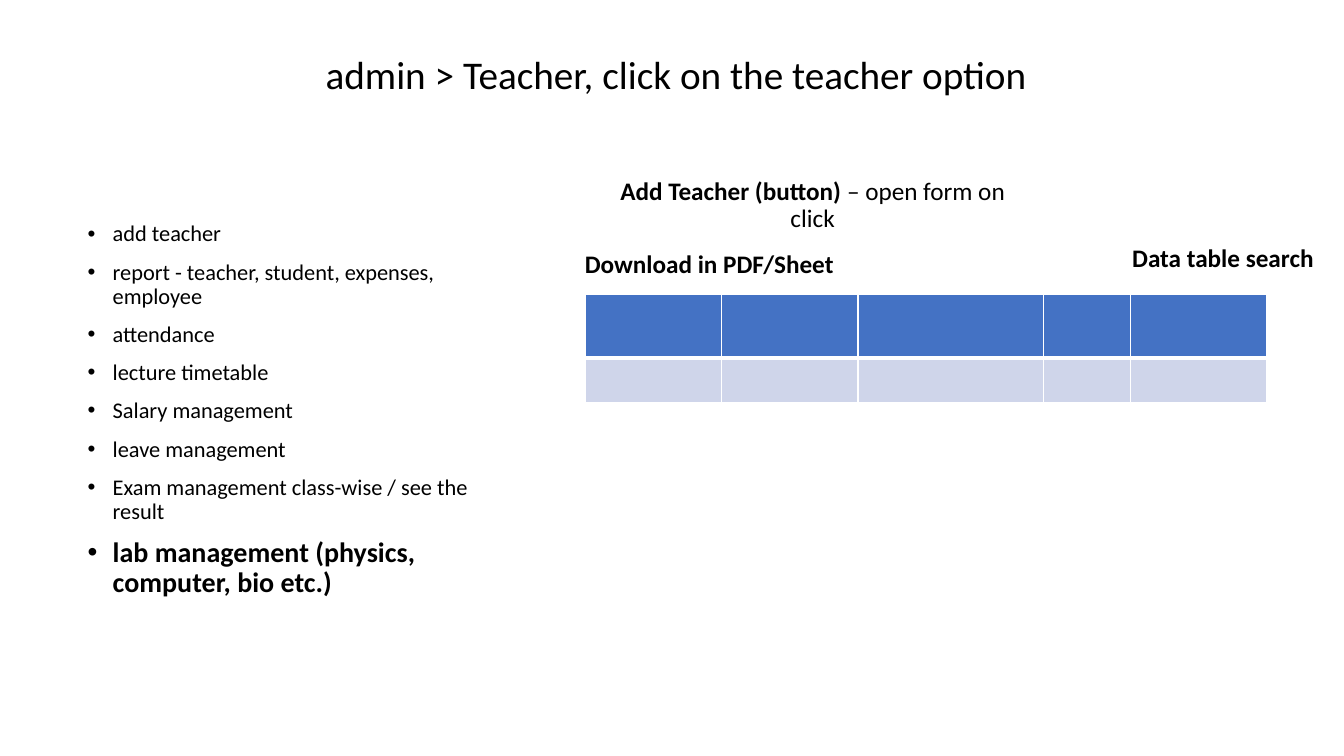
from lxml import etree
from pptx import Presentation
from pptx.dml.color import RGBColor
from pptx.enum.text import MSO_ANCHOR, MSO_AUTO_SIZE, PP_ALIGN
from pptx.oxml.ns import qn
from pptx.util import Inches, Pt

TOP, BOTTOM = MSO_ANCHOR.TOP, MSO_ANCHOR.BOTTOM
FIT_SHAPE, NO_FIT = MSO_AUTO_SIZE.SHAPE_TO_FIT_TEXT, MSO_AUTO_SIZE.NONE
LEFT, CENTER = PP_ALIGN.LEFT, PP_ALIGN.CENTER

WIDTH, HEIGHT = 13.33, 7.5
TITLE_ONLY = 5
FONT = "Calibri"
BLACK, WHITE, BLUE, PALE_BLUE = "000000", "FFFFFF", "4472C4", "CFD5EA"

TITLE_BOX = (3.13, 0.45, 7.82, 0.57)
MENU_BOX = (0.77, 2.16, 4.3, 4.05)
TEACHER_BOX = (5.81, 1.96, 7.39, 2.02)

MENU = [
    "add teacher",
    "report - teacher, student, expenses, employee",
    "attendance",
    "lecture timetable",
    "Salary management",
    "leave management",
    "Exam management class-wise / see the result",
]
MENU_HIGHLIGHT = "lab management (physics, computer, bio etc.)"

COLUMN_WIDTHS = (1.35, 1.35, 1.84, 0.86, 1.35)
ROWS = ((0.63, BLUE, 3), (0.44, PALE_BLUE, 1))


def color(value):
    return RGBColor.from_string(value)


def set_attributes(target, values):
    for name, value in values.items():
        setattr(target, name, value)


def place(shape, box):
    names = ("left", "top", "width", "height")
    set_attributes(shape, dict(zip(names, map(Inches, box))))


def add_run(paragraph, text, size, bold=False):
    run = paragraph.add_run()
    run.text = text
    set_attributes(run.font, {"name": FONT, "size": Pt(size), "bold": bold})
    run.font.color.rgb = color(BLACK)


def add_text_box(slide, box, anchor):
    shape = slide.shapes.add_textbox(*map(Inches, box))
    frame = shape.text_frame
    set_attributes(frame, {"word_wrap": True, "auto_size": NO_FIT, "vertical_anchor": anchor})
    return frame


def add_title(slide, box, text):
    title = slide.shapes.title
    place(title, box)
    frame = title.text_frame
    set_attributes(frame, {"word_wrap": True, "auto_size": FIT_SHAPE, "vertical_anchor": TOP})
    paragraph = frame.paragraphs[0]
    paragraph.alignment = LEFT
    add_run(paragraph, text, 28)


def add_bullet(paragraph):
    properties = paragraph._p.get_or_add_pPr()
    indent = Inches(0.25)
    properties.set("marL", str(indent))
    properties.set("indent", str(-indent))
    etree.SubElement(properties, qn("a:buFont")).set("typeface", "Arial")
    etree.SubElement(properties, qn("a:buChar")).set("char", "•")


def add_menu(slide, box):
    frame = add_text_box(slide, box, TOP)
    items = [(text, 16, False) for text in MENU] + [(MENU_HIGHLIGHT, 20, True)]
    for index, (text, size, bold) in enumerate(items):
        paragraph = frame.add_paragraph() if index else frame.paragraphs[0]
        set_attributes(paragraph, {"line_spacing": 0.9, "space_before": Pt(10)})
        add_bullet(paragraph)
        add_run(paragraph, text, size, bold)


def add_caption(slide, box, bold_text, plain_text=""):
    paragraph = add_text_box(slide, box, BOTTOM).paragraphs[0]
    set_attributes(paragraph, {"alignment": CENTER, "line_spacing": 0.9})
    add_run(paragraph, bold_text, 18, True)
    if plain_text:
        add_run(paragraph, plain_text, 18)


def set_borders(cell, top, bottom):
    properties = cell._tc.get_or_add_tcPr()
    for side, width in (("L", 1), ("R", 1), ("T", top), ("B", bottom)):
        line = etree.SubElement(properties, qn(f"a:ln{side}"))
        line.set("w", str(Pt(width)))
        fill = etree.SubElement(line, qn("a:solidFill"))
        etree.SubElement(fill, qn("a:srgbClr")).set("val", WHITE)


def add_teacher_table(slide, left, top):
    width, height = sum(COLUMN_WIDTHS), sum(row[0] for row in ROWS)
    frame = slide.shapes.add_table(
        len(ROWS), len(COLUMN_WIDTHS), *map(Inches, (left, top, width, height))
    )
    table = frame.table
    for column, column_width in zip(table.columns, COLUMN_WIDTHS):
        column.width = Inches(column_width)
    top_border = 1
    for row, (row_height, fill, bottom_border) in zip(table.rows, ROWS):
        row.height = Inches(row_height)
        for cell in row.cells:
            set_borders(cell, top_border, bottom_border)
            cell.fill.solid()
            cell.fill.fore_color.rgb = color(fill)
        top_border = bottom_border


def add_teacher_panel(slide, box):
    left, top, width, height = box
    caption_height = 0.4
    search_width = 2.14
    add_teacher_table(slide, left, top + 0.96)
    add_caption(slide, (left, top, 4.5, caption_height), "Add Teacher (button)", " – open form on click")
    search_left = left + width - search_width
    add_caption(slide, (search_left, top + caption_height, search_width, caption_height), "Data table search")
    add_caption(slide, (left - 0.19, top + 0.46, 2.83, caption_height), "Download in PDF/Sheet")


def main():
    presentation = Presentation()
    set_attributes(presentation, {"slide_width": Inches(WIDTH), "slide_height": Inches(HEIGHT)})
    slide = presentation.slides.add_slide(presentation.slide_layouts[TITLE_ONLY])
    add_title(slide, TITLE_BOX, "admin > Teacher, click on the teacher option")
    add_menu(slide, MENU_BOX)
    add_teacher_panel(slide, TEACHER_BOX)
    presentation.save("out.pptx")


if __name__ == "__main__":
    main()
